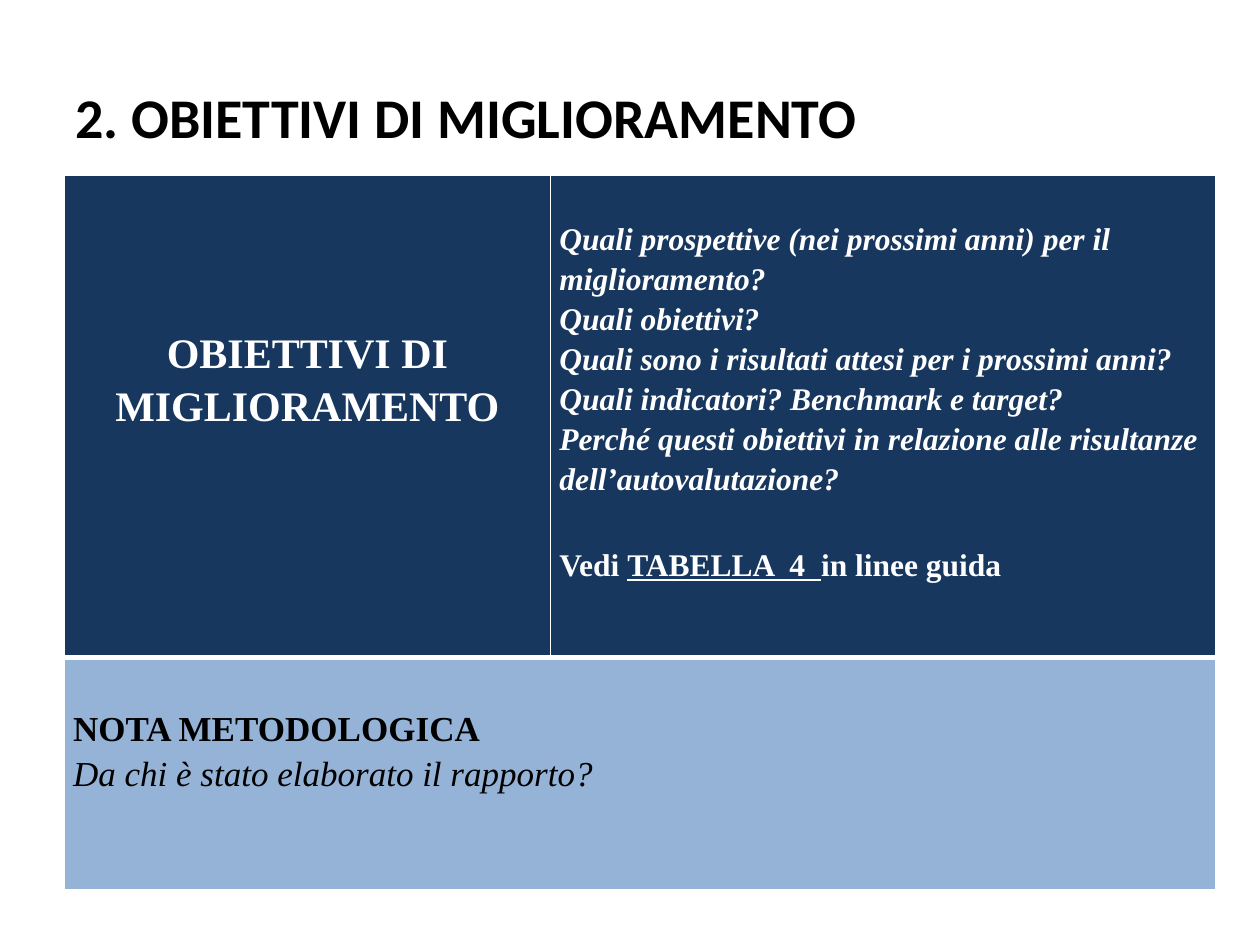
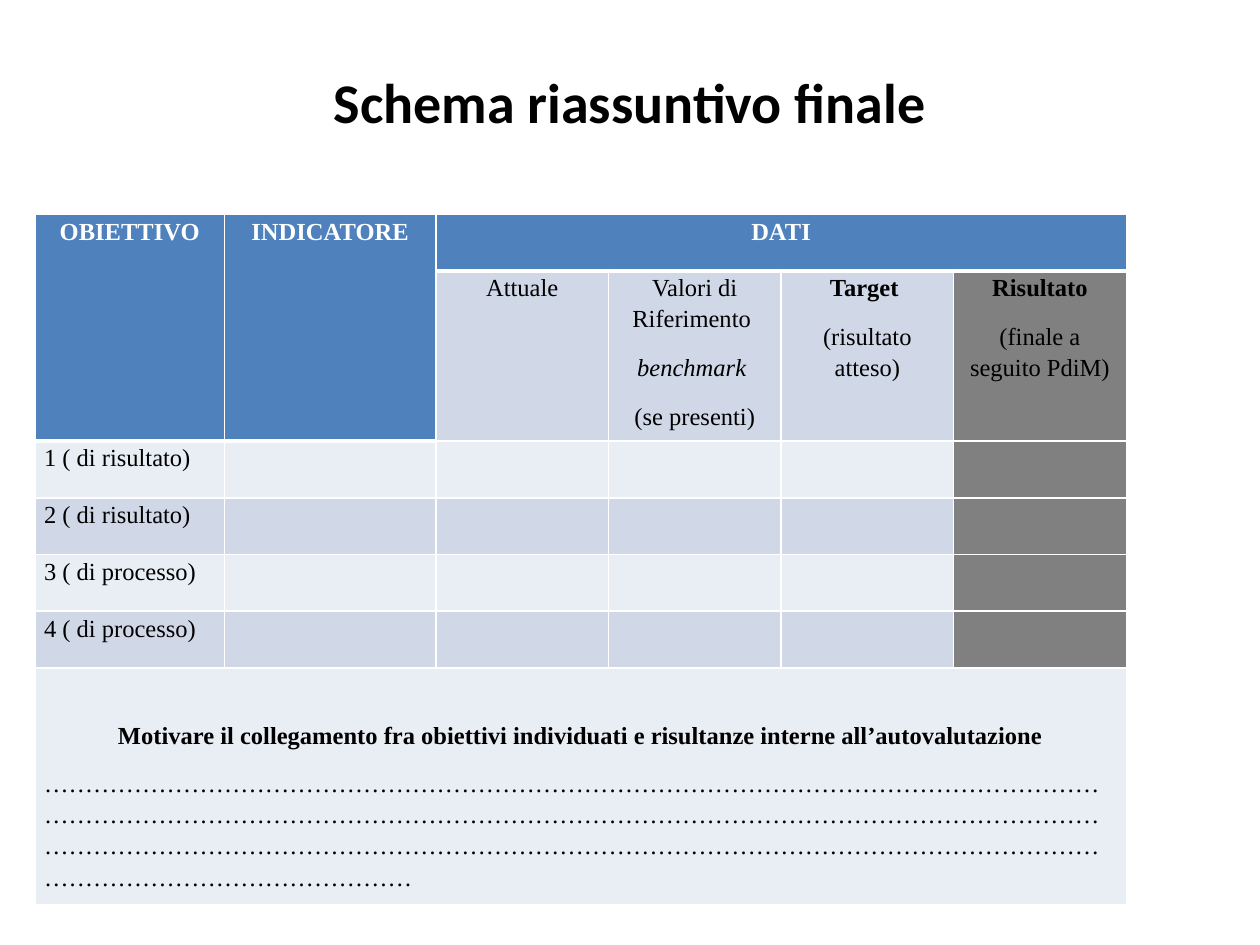
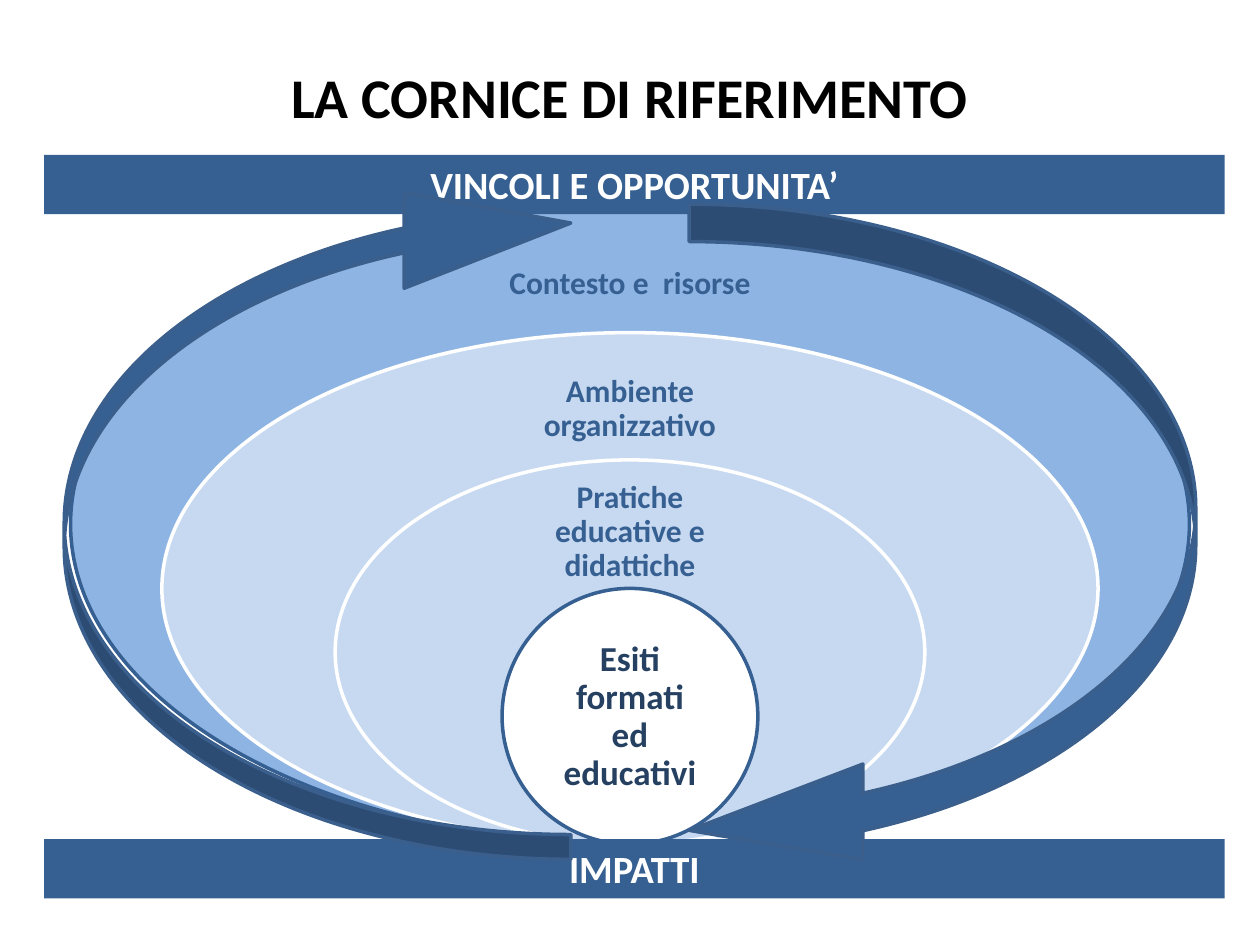
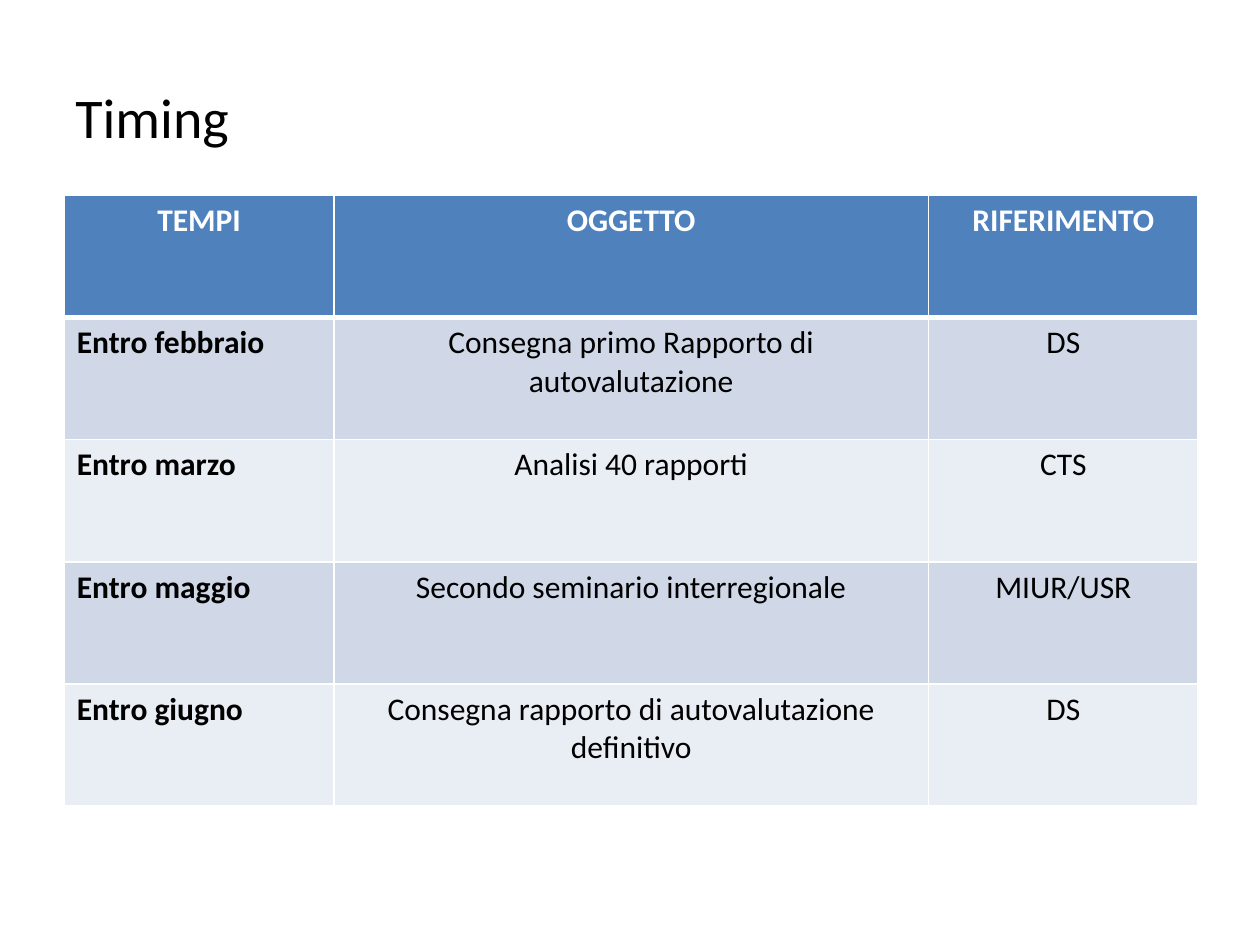
from lxml import etree
from pptx import Presentation
from pptx.dml.color import RGBColor
from pptx.enum.shapes import MSO_SHAPE
from pptx.enum.text import MSO_ANCHOR, MSO_AUTO_SIZE, PP_ALIGN
from pptx.oxml.ns import qn
from pptx.util import Inches, Pt

LEFT, CENTER = PP_ALIGN.LEFT, PP_ALIGN.CENTER
TOP, MIDDLE = MSO_ANCHOR.TOP, MSO_ANCHOR.MIDDLE
GROW = MSO_AUTO_SIZE.SHAPE_TO_FIT_TEXT
ELLIPSE, RECTANGLE = MSO_SHAPE.OVAL, MSO_SHAPE.RECTANGLE
CURVED_ARROW = MSO_SHAPE.CURVED_LEFT_ARROW

SANS, SERIF = "Calibri", "Times New Roman"
COLORS = {
    "black": "000000", "white": "FFFFFF", "navy": "17375E", "note": "95B3D7",
    "header": "4F81BD", "band": "D0D8E8", "light": "E9EDF4", "gray": "808080",
    "steel": "376092", "arrow_line": "3A5F8C", "sky": "8EB4E3",
    "pale": "C6D9F1", "ink": "254061",
}


def rgb(name):
    return RGBColor.from_string(COLORS[name])


def add_span(para, text, font=SANS, size=18, color="black", bold=False,
             italic=False, underline=False):
    span = para.add_run()
    span.text = text
    span.font.name = font
    span.font.size = Pt(size)
    span.font.color.rgb = rgb(color)
    span.font.bold = bold
    span.font.italic = italic
    span.font.underline = underline


def write(frame, text, align=LEFT, line=None, before=0, after=0, **look):
    para = frame.paragraphs[-1]
    if para.runs:
        para = frame.add_paragraph()
    para.alignment = align
    para.line_spacing = line
    para.space_before = Pt(before)
    para.space_after = Pt(after)
    add_span(para, text, **look)
    return para


def set_border(cell, side, width):
    properties = cell._tc.get_or_add_tcPr()
    line = properties.find(qn(f"a:ln{side}"))
    if line is None:
        line = etree.SubElement(properties, qn(f"a:ln{side}"))
        fill = etree.SubElement(line, qn("a:solidFill"))
        etree.SubElement(fill, qn("a:srgbClr"), val=COLORS["white"])
    line.set("w", str(Pt(width)))


class Deck:
    def __init__(self):
        self.deck = Presentation()
        self.deck.slide_width = Inches(10)
        self.deck.slide_height = Inches(7.5)
        self.page = None

    def add_page(self, title, height, align=LEFT, bold=True):
        self.page = self.deck.slides.add_slide(self.deck.slide_layouts[6])
        self.text(title, 0.5, 0.3, 9, height, size=32, align=align, bold=bold)

    def text(self, text, left, top, width, height, inset=None, **look):
        box = self.page.shapes.add_textbox(
            Inches(left), Inches(top), Inches(width), Inches(height))
        frame = box.text_frame
        frame.word_wrap = True
        frame.vertical_anchor = MIDDLE
        if inset:
            frame.margin_left = frame.margin_right = Inches(inset)
            frame.margin_top = frame.margin_bottom = Inches(inset)
        write(frame, text, **look)
        return box

    def shape(self, kind, left, top, width, height, fill, line=None):
        shape = self.page.shapes.add_shape(
            kind, Inches(left), Inches(top), Inches(width), Inches(height))
        shape.shadow.inherit = False
        shape.fill.solid()
        shape.fill.fore_color.rgb = rgb(fill)
        if line:
            shape.line.color.rgb = rgb(line)
            shape.line.width = Pt(2)
        else:
            shape.line.fill.background()
        return shape

    def bar(self, text, top):
        bar = self.shape(RECTANGLE, 0.35, top, 9.37, 0.47, "steel")
        frame = bar.text_frame
        frame.vertical_anchor = TOP
        frame.auto_size = GROW
        write(frame, text, align=CENTER, size=22, color="white", bold=True)

    def arrow(self, left, top, height, adjustments, rotation=0):
        arrow = self.shape(CURVED_ARROW, left, top, 4.02, height,
                           "steel", "arrow_line")
        arrow.rotation = rotation
        for index, value in enumerate(adjustments):
            arrow.adjustments[index] = value

    def table(self, left, top, columns, rows, fill_of, heavy, margins=(0.1, 0.05)):
        table = self.page.shapes.add_table(
            len(rows), len(columns), Inches(left), Inches(top),
            Inches(sum(columns)), Inches(sum(rows))).table
        table.first_row = table.horz_banding = False
        for column, width in zip(table.columns, columns):
            column.width = Inches(width)
        for row, height in zip(table.rows, rows):
            row.height = Inches(height)
        for row in range(len(rows)):
            for column in range(len(columns)):
                cell = table.cell(row, column)
                for side in "LRTB":
                    set_border(cell, side, 1)
                cell.fill.solid()
                cell.fill.fore_color.rgb = rgb(fill_of(row, column))
                cell.margin_left = cell.margin_right = Inches(margins[0])
                cell.margin_top = cell.margin_bottom = Inches(margins[1])
        for row, column in heavy:
            set_border(table.cell(row, column), "B", 3)
            set_border(table.cell(row + 1, column), "T", 3)
        return table


def build_goals(deck):
    deck.add_page("2. OBIETTIVI DI MIGLIORAMENTO", 1.25)
    table = deck.table(0.51, 1.39, [3.86, 5.28], [3.83, 1.84],
                       lambda row, column: "note" if row else "navy",
                       [(0, 0), (0, 1)], (0.07, 0))
    table.cell(1, 0).merge(table.cell(1, 1))
    goal, questions, note = table.cell(0, 0), table.cell(0, 1), table.cell(1, 0)
    goal.margin_top = Inches(1.18)
    questions.margin_top = Inches(0.33)
    note.margin_top = Inches(0.37)

    write(goal.text_frame, "OBIETTIVI DI MIGLIORAMENTO", align=CENTER, line=1.15,
          font=SERIF, size=24, color="white", bold=True)
    look = {"font": SERIF, "size": 18, "color": "white", "bold": True}
    for question in [
        "Quali prospettive (nei prossimi anni) per il miglioramento?",
        "Quali obiettivi?",
        "Quali sono i risultati attesi per i prossimi anni?",
        "Quali indicatori? Benchmark e target?",
        "Perché questi obiettivi in relazione alle risultanze dell’autovalutazione?",
    ]:
        write(questions.text_frame, question, line=1.15, italic=True, **look)
    para = write(questions.text_frame, "Vedi ", line=1.15, before=26.4, **look)
    add_span(para, "TABELLA  4  ", underline=True, **look)
    add_span(para, "in linee guida", **look)
    write(note.text_frame, "NOTA METODOLOGICA", line=1.15,
          font=SERIF, size=20, bold=True)
    write(note.text_frame, "Da chi è stato elaborato il rapporto?", line=1.15,
          font=SERIF, size=20, italic=True)


def summary_fill(row, column):
    if row == 0 or (row == 1 and column < 2):
        return "header"
    if column == 5 and row < 6:
        return "gray"
    return "band" if row % 2 else "light"


def build_summary(deck):
    deck.add_page("Schema riassuntivo finale", 1.01, CENTER)
    heavy = [(0, column) for column in range(6)] + [(1, 0), (1, 1)]
    table = deck.table(0.28, 1.7, [1.5, 1.68] + [1.37] * 4,
                       [0.45, 1.31] + [0.45] * 4 + [1.41],
                       summary_fill, heavy, (0.07, 0))
    for first, last in [((0, 0), (1, 0)), ((0, 1), (1, 1)),
                        ((0, 2), (0, 5)), ((6, 0), (6, 5))]:
        table.cell(*first).merge(table.cell(*last))

    look = {"font": SERIF, "size": 14, "line": 1.15, "after": 10}
    for column, heading in enumerate(["OBIETTIVO", "INDICATORE", "DATI"]):
        write(table.cell(0, column).text_frame, heading, align=CENTER,
              color="white", bold=True, **look)
    plain, strong, slanted = {}, {"bold": True}, {"italic": True}
    subheadings = [
        [("Attuale", plain)],
        [("Valori di Riferimento ", plain), ("benchmark ", slanted),
         ("(se presenti)", plain)],
        [("Target ", strong), ("(risultato atteso)", plain)],
        [("Risultato", strong), ("(finale a seguito PdiM)", plain)],
    ]
    for column, lines in enumerate(subheadings, 2):
        for text, emphasis in lines:
            write(table.cell(1, column).text_frame, text, align=CENTER,
                  **look, **emphasis)
    goals = ["risultato", "risultato", "processo", "processo"]
    for number, goal in enumerate(goals, 1):
        write(table.cell(number + 1, 0).text_frame, f"{number} ( di {goal})", **look)
    reasons = table.cell(6, 0)
    reasons.margin_top = Inches(0.4)
    write(reasons.text_frame,
          "Motivare il collegamento fra obiettivi individuati e risultanze "
          "interne all’autovalutazione", align=CENTER, bold=True, **look)
    write(reasons.text_frame, "…" * 144, **look)


def build_framework(deck):
    deck.add_page("LA CORNICE DI RIFERIMENTO", 0.93, CENTER)
    layers = [
        ("Contesto e  risorse", 8.88, 5.08, "sky", "steel",
         (1.88, 2.48, 0.76), 0.14, 18, "steel"),
        ("Ambiente organizzativo", 7.43, 4.06, "pale", "white",
         (2.88, 2.6, 0.73), 0.14, 18, "steel"),
        ("Pratiche educative e didattiche", 4.68, 3.05, "pale", "white",
         (3.88, 2.18, 0.69), 0.14, 18, "steel"),
        ("Esiti formati ed educativi", 2.03, 2.03, "white", "steel",
         (5.18, 1.44, 1.02), 0.16, 20, "ink"),
    ]
    middle, bottom = 5, 6.7
    parts = []
    for text, width, height, fill, line, label, inset, size, color in layers:
        parts.append(deck.shape(ELLIPSE, middle - width / 2, bottom - height,
                                width, height, fill, line))
        label_top, label_width, label_height = label
        parts.append(deck.text(text, middle - label_width / 2, label_top,
                               label_width, label_height, inset, align=CENTER,
                               line=0.9, size=size, color=color, bold=True))
    deck.page.shapes.add_group_shape(parts)
    deck.bar("VINCOLI E OPPORTUNITA’", 1.23)
    deck.bar("IMPATTI", 6.66)
    deck.arrow(5.47, 1.62, 5.35, [0.074, 0.189, 0.343])
    deck.arrow(0.51, 1.39, 5.43, [0.049, 0.189, 0.329], rotation=180)


def timing_fill(row, column):
    if row == 0:
        return "header"
    return "band" if row % 2 else "light"


def build_timing(deck):
    deck.add_page("Timing", 1.25, bold=False)
    entries = [
        ("TEMPI", "OGGETTO", "RIFERIMENTO"),
        ("Entro febbraio", "Consegna primo Rapporto di autovalutazione", "DS"),
        ("Entro marzo", "Analisi 40 rapporti", "CTS"),
        ("Entro maggio", "Secondo seminario interregionale", "MIUR/USR"),
        ("Entro giugno", "Consegna rapporto di autovalutazione definitivo", "DS"),
    ]
    table = deck.table(0.51, 1.55, [2.14, 4.72, 2.14], [0.97] * len(entries),
                       timing_fill, [(0, column) for column in range(3)])
    for row, entry in enumerate(entries):
        for column, text in enumerate(entry):
            write(table.cell(row, column).text_frame, text,
                  align=LEFT if row and column == 0 else CENTER,
                  color="black" if row else "white",
                  bold=row == 0 or column == 0)


def main():
    deck = Deck()
    for build in (build_goals, build_summary, build_framework, build_timing):
        build(deck)
    deck.deck.save("out.pptx")


if __name__ == "__main__":
    main()
